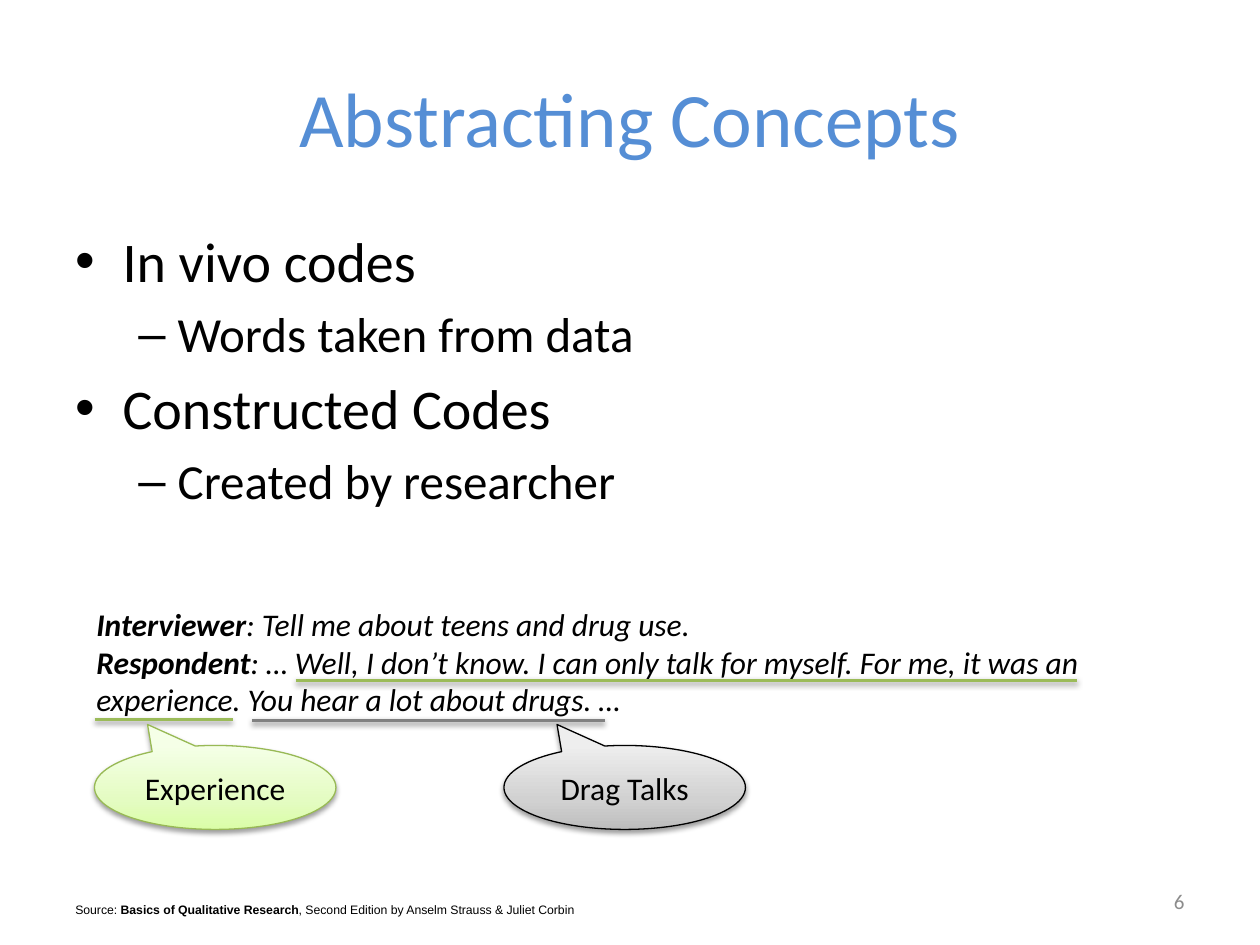
from pptx import Presentation
from pptx.dml.color import RGBColor
from pptx.enum.shapes import MSO_CONNECTOR, MSO_SHAPE
from pptx.enum.text import MSO_ANCHOR as ANCHOR, PP_ALIGN as ALIGN
from pptx.oxml import parse_xml
from pptx.oxml.ns import nsdecls, qn
from pptx.util import Pt

BLACK = RGBColor(0x00, 0x00, 0x00)
TITLE_BLUE = RGBColor(0x55, 0x8E, 0xD5)
NUMBER_GRAY = RGBColor(0x8C, 0x8C, 0x8C)
MARK_GREEN = RGBColor(0x9B, 0xBB, 0x59)
MARK_GRAY = RGBColor(0x80, 0x80, 0x80)
EDGE_GREEN = RGBColor(0x98, 0xB9, 0x55)
GREENS = [RGBColor(0xDA, 0xFD, 0xA7), RGBColor(0xE4, 0xFC, 0xC2), RGBColor(0xF5, 0xFF, 0xE7)]
GRAYS = [RGBColor(0xBD, 0xBD, 0xBD), RGBColor(0xD1, 0xD1, 0xD1), RGBColor(0xEE, 0xEE, 0xEE)]
STOPS = (0, 35, 100)


def add_run(p, text, size, color=BLACK, font="Calibri", bold=False, italic=False):
    r = p.add_run()
    r.text = text
    r.font.size, r.font.name = Pt(size), font
    r.font.bold, r.font.italic = bold, italic
    r.font.color.rgb = color


def add_box(slide, x, y, w, h, anchor=ANCHOR.TOP, align=ALIGN.LEFT):
    tf = slide.shapes.add_textbox(Pt(x), Pt(y), Pt(w), Pt(h)).text_frame
    tf.word_wrap = True
    tf.vertical_anchor = anchor
    tf.paragraphs[0].alignment = align
    return tf


def add_shadow(sp):
    sp._element.spPr.append(parse_xml(
        f'<a:effectLst {nsdecls("a")}>'
        f'<a:outerShdw blurRad="{Pt(3.1)}" dist="{Pt(1.6)}" dir="5400000" rotWithShape="0">'
        f'<a:srgbClr val="{BLACK}"><a:alpha val="38000"/></a:srgbClr>'
        '</a:outerShdw></a:effectLst>'))


def fill_upward(sp, colors):
    """Fill with a gradient that runs from the bottom to the top."""
    sp.fill.gradient()
    spPr = sp._element.spPr
    stops = "".join(f'<a:gs pos="{pos * 1000}"><a:srgbClr val="{color}"/></a:gs>'
                    for pos, color in zip(STOPS, colors))
    spPr.replace(spPr.find(qn("a:gradFill")), parse_xml(
        f'<a:gradFill {nsdecls("a")} rotWithShape="1"><a:gsLst>{stops}</a:gsLst>'
        '<a:lin ang="16200000" scaled="0"/></a:gradFill>'))


def add_title(slide, x, y, w, h):
    tf = add_box(slide, x, y, w, h, ANCHOR.MIDDLE, ALIGN.CENTER)
    add_run(tf.paragraphs[0], "Abstracting Concepts", 44, TITLE_BLUE)


def add_bullets(slide, x, y, w, h, items):
    styles = [("•", 32, 27, 27), ("–", 28, 58.5, 22.5)]
    tf = add_box(slide, x, y, w, h)
    for i, (level, text) in enumerate(items):
        char, size, left, hang = styles[level]
        p = tf.add_paragraph() if i else tf.paragraphs[0]
        p.level = level
        p.space_before = Pt(size * 0.2)
        pPr = p._p.get_or_add_pPr()
        pPr.set("marL", str(Pt(left)))
        pPr.set("indent", str(-Pt(hang)))
        pPr.append(parse_xml(f'<a:buFont {nsdecls("a")} typeface="Arial"/>'))
        pPr.append(parse_xml(f'<a:buChar {nsdecls("a")} char="{char}"/>'))
        add_run(p, text, size)


def add_underline(slide, x, y, w, color):
    ln = slide.shapes.add_connector(MSO_CONNECTOR.STRAIGHT, Pt(x), Pt(y), Pt(x + w), Pt(y))
    ln.line.color.rgb = color
    ln.line.width = Pt(2)
    add_shadow(ln)


def add_callout(slide, x, y, text, colors, edge):
    sp = slide.shapes.add_shape(MSO_SHAPE.OVAL_CALLOUT, Pt(x), Pt(y), Pt(138), Pt(48))
    sp.adjustments[0], sp.adjustments[1] = -0.28, -0.75
    fill_upward(sp, colors)
    sp.line.color.rgb = edge
    sp.line.width = Pt(0.75)
    add_shadow(sp)
    tf = sp.text_frame
    tf.word_wrap = True
    tf.vertical_anchor = ANCHOR.MIDDLE
    p = tf.paragraphs[0]
    p.alignment = ALIGN.CENTER
    add_run(p, text, 18)


def add_interview(slide, x, y, w, h):
    """Transcript with its coded phrases underlined and labelled."""
    p = add_box(slide, x, y, w, h).paragraphs[0]
    add_run(p, "Interviewer", 18, bold=True, italic=True)
    add_run(p, ": Tell me about teens and drug use.", 18, italic=True)
    p.add_line_break()
    add_run(p, "Respondent", 18, bold=True, italic=True)
    add_run(p, ": … Well, I don’t know. I can only talk for myself. For me, it was an "
               "experience. You hear a lot about drugs. …", 18, italic=True)
    add_underline(slide, x + 121, y + 46.8, 446.4, MARK_GREEN)
    add_underline(slide, x + 6, y + 69.3, 79, MARK_GREEN)
    add_callout(slide, x + 6, y + 84, "Experience", GREENS, EDGE_GREEN)
    add_underline(slide, x + 96, y + 69.6, 201.6, MARK_GRAY)
    add_callout(slide, x + 240, y + 84, "Drag Talks", GRAYS, BLACK)


def add_source(slide, x, y, w, h):
    p = add_box(slide, x, y, w, h).paragraphs[0]
    add_run(p, "Source: ", 7, font="Arial")
    add_run(p, "Basics of Qualitative Research", 7, font="Arial", bold=True)
    add_run(p, ", Second Edition by Anselm Strauss & Juliet Corbin", 7, font="Arial")


def add_page_number(slide, x, y, w, h):
    tf = add_box(slide, x, y, w, h, ANCHOR.MIDDLE, ALIGN.RIGHT)
    add_run(tf.paragraphs[0], "6", 12, NUMBER_GRAY)


def main():
    prs = Presentation()
    prs.slide_width, prs.slide_height = Pt(720), Pt(540)
    slide = prs.slides.add_slide(prs.slide_layouts[6])
    add_title(slide, 36, 21.6, 648, 90)
    add_bullets(slide, 36, 126, 648, 356.4, [
        (0, "In vivo codes"),
        (1, "Words taken from data"),
        (0, "Constructed Codes"),
        (1, "Created by researcher"),
    ])
    add_page_number(slide, 516, 500.5, 168, 28.75)
    add_interview(slide, 48, 342, 612, 72.7)
    add_source(slide, 36, 512, 360, 15.8)
    prs.save("out.pptx")


if __name__ == "__main__":
    main()
